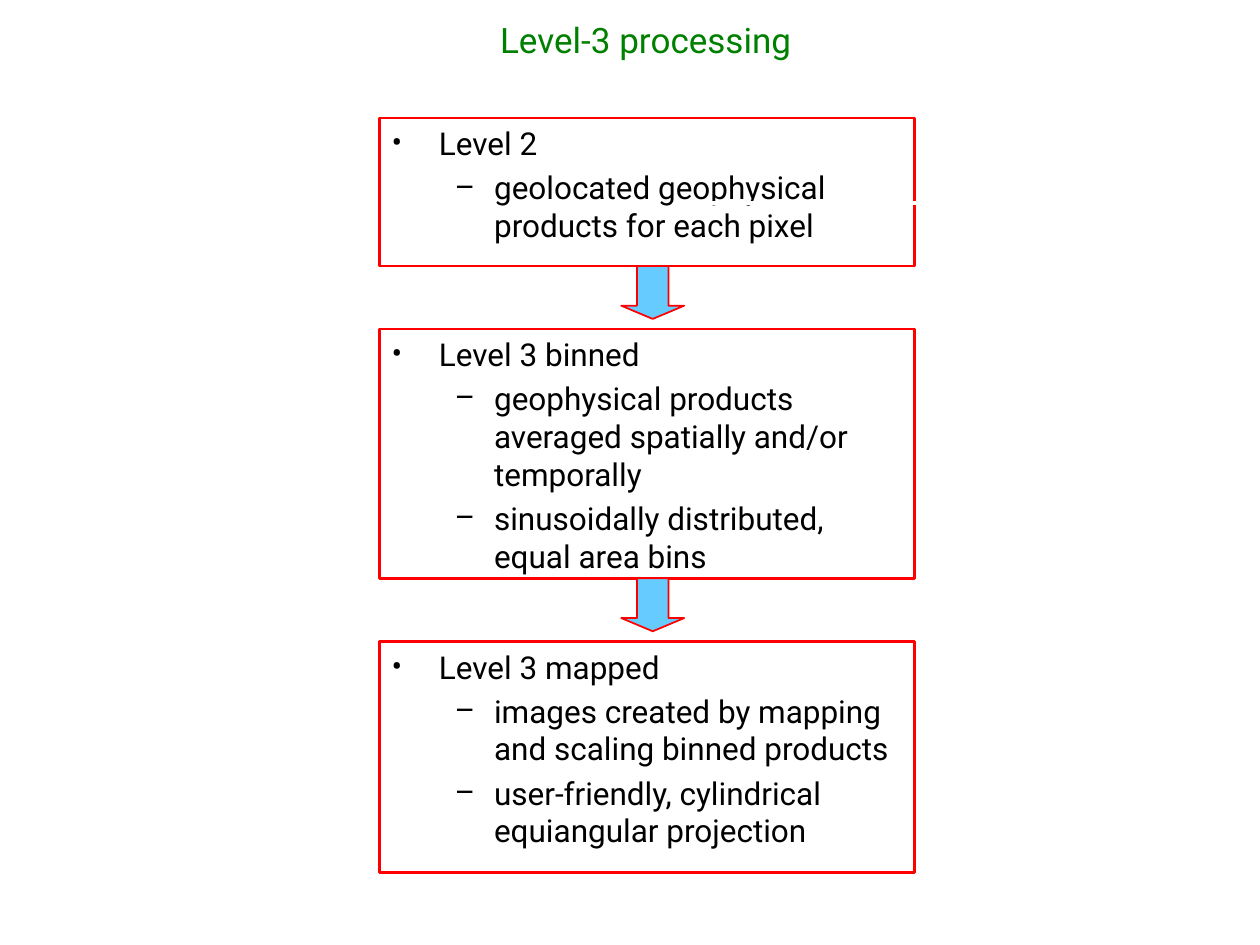
from lxml import etree
from pptx import Presentation
from pptx.dml.color import RGBColor
from pptx.enum.shapes import MSO_CONNECTOR, MSO_SHAPE
from pptx.enum.text import MSO_ANCHOR, PP_ALIGN
from pptx.oxml.ns import qn
from pptx.util import Pt

RECT, ARROW = MSO_SHAPE.RECTANGLE, MSO_SHAPE.DOWN_ARROW
LINE = MSO_CONNECTOR.STRAIGHT
TOP, LEFT, CENTER = MSO_ANCHOR.TOP, PP_ALIGN.LEFT, PP_ALIGN.CENTER

FONT = "Roboto"
COLORS = {"title": "008000", "text": "000000", "edge": "FF0000",
          "arrow": "66CCFF", "rule": "FFFFFF"}
# Bullet, left margin and hanging indent in points for each level
LEVELS = [("•", 27, 27), ("–", 58.5, 22.5)]
BOX_X, BOX_W = 216.75, 306
ARROW_X, ARROW_W, ARROW_H = 355, 36, 30.25

# Top, height, heading and details of each stage
STAGES = [
    (67.5, 84.5, "Level 2",
     ["geolocated geophysical products for each pixel"]),
    (187.9, 142.6, "Level 3 binned",
     ["geophysical products averaged spatially and/or temporally",
      "sinusoidally distributed, equal area bins"]),
    (366.5, 132, "Level 3 mapped",
     ["images created by mapping and scaling binned products",
      "user-friendly, cylindrical equiangular projection"]),
]


def color(name):
    return RGBColor.from_string(COLORS[name])


def style(para, size, name):
    for run in para.runs:
        run.font.name = FONT
        run.font.size = Pt(size)
        run.font.color.rgb = color(name)


def bullet(para, level):
    """Give a paragraph the bullet and hanging indent of its level."""
    char, margin, hang = LEVELS[level]
    para.level = level
    props = para._p.get_or_add_pPr()
    props.set("marL", str(Pt(margin)))
    props.set("indent", str(-Pt(hang)))
    etree.SubElement(props, qn("a:buFont"), typeface=FONT)
    etree.SubElement(props, qn("a:buChar"), char=char)


def add_title(slide, text):
    box = slide.shapes.add_textbox(Pt(36), Pt(7.2), Pt(666), Pt(31.5))
    frame = box.text_frame
    frame.word_wrap = True
    frame.text = text
    para = frame.paragraphs[0]
    para.alignment = CENTER
    style(para, 20, "title")


def add_outlined(slide, kind, x, y, w, h, weight):
    shape = slide.shapes.add_shape(kind, Pt(x), Pt(y), Pt(w), Pt(h))
    shape.shadow.inherit = False
    shape.line.color.rgb = color("edge")
    shape.line.width = Pt(weight)
    return shape


def add_stage(slide, top, height, head, details):
    box = add_outlined(slide, RECT, BOX_X, top, BOX_W, height, 1.5)
    box.fill.background()
    frame = box.text_frame
    frame.word_wrap = True
    frame.vertical_anchor = TOP
    frame.text = "\n".join([head, *details])
    for i, para in enumerate(frame.paragraphs):
        para.alignment = LEFT
        para.space_before = Pt(3.6 if i else 0)
        bullet(para, min(i, 1))
        style(para, 18, "text")


def add_arrow(slide, top):
    arrow = add_outlined(slide, ARROW, ARROW_X, top, ARROW_W, ARROW_H, 1)
    arrow.adjustments[0] = 0.5
    arrow.adjustments[1] = 0.25
    arrow.fill.solid()
    arrow.fill.fore_color.rgb = color("arrow")


def add_rule(slide, x, y, end):
    rule = slide.shapes.add_connector(LINE, Pt(x), Pt(y), Pt(end), Pt(y))
    rule.line.color.rgb = color("rule")
    rule.line.width = Pt(2)
    etree.SubElement(rule._element.spPr, qn("a:effectLst"))


def main():
    deck = Presentation()
    deck.slide_width, deck.slide_height = Pt(720), Pt(540)
    slide = deck.slides.add_slide(deck.slide_layouts[6])
    for stage in STAGES:
        add_stage(slide, *stage)
    for top, height, *_ in STAGES[:-1]:
        add_arrow(slide, top + height)
    add_rule(slide, 391, 116, 643)
    add_title(slide, "Level-3 processing")
    deck.save("out.pptx")


if __name__ == "__main__":
    main()
